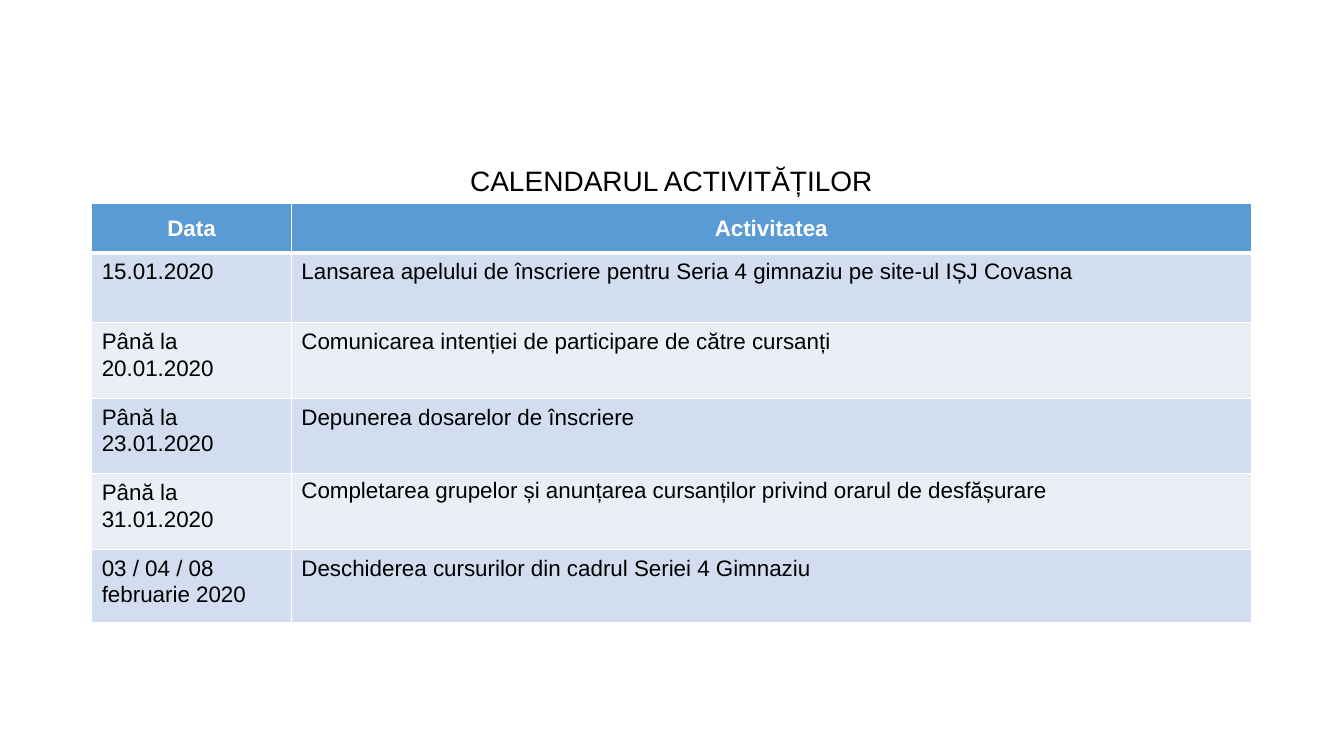
from lxml import etree
from pptx import Presentation, util as u
from pptx.dml.color import RGBColor
from pptx.enum import text
from pptx.oxml import ns

deck = Presentation()
deck.slide_width, deck.slide_height = u.Inches(13.33), u.Inches(7.5)
slide = deck.slides.add_slide(deck.slide_layouts[6])

LEFT, WIDTH = 0.91, 11.5
COLS = [1.98, 9.52]
ROWS = [0.49, 0.69, 0.75, 0.75, 0.75, 0.73]
HEAD, BANDS = "5B9BD5", ["EAEFF7", "D2DEEF"]
MID = text.MSO_ANCHOR.MIDDLE


def write(para, words, size, color, bold=False, center=False):
    run = para.add_run()
    run.text = words
    font = run.font
    font.name, font.size, font.bold = "Arial", u.Pt(size), bold
    font.color.rgb = RGBColor.from_string(color)
    para.alignment = text.PP_ALIGN.CENTER if center else text.PP_ALIGN.LEFT


def edge(cell, side, width):
    line = etree.SubElement(cell._tc.get_or_add_tcPr(), ns.qn("a:ln" + side), w=str(u.Pt(width)))
    fill = etree.SubElement(line, ns.qn("a:solidFill"))
    etree.SubElement(fill, ns.qn("a:srgbClr"), val="FFFFFF")


# Title
box = slide.shapes.add_textbox(*map(u.Inches, (LEFT, 1.6, WIDTH, 0.42)))
frame = box.text_frame
frame.word_wrap = True
frame.vertical_anchor = MID
title = frame.paragraphs[0]
title.line_spacing = 0.9
write(title, "CALENDARUL ACTIVITĂȚILOR", 20, "000000", center=True)

# Calendar entries
items = [
    ("Data", "Activitatea"),
    ("15.01.2020", "Lansarea apelului de înscriere pentru Seria 4 gimnaziu pe site-ul IȘJ Covasna"),
    ("Până la 20.01.2020", "Comunicarea intenției de participare de către cursanți"),
    ("Până la 23.01.2020", "Depunerea dosarelor de înscriere"),
    ("Până la 31.01.2020", "Completarea grupelor și anunțarea cursanților privind orarul de desfășurare"),
    ("03 / 04 / 08 februarie 2020", "Deschiderea cursurilor din cadrul Seriei 4 Gimnaziu"),
]
SINGLE = (4, 1)  # the one cell with plain line spacing

# Table grid
area = map(u.Inches, (LEFT, 2.02, WIDTH, sum(ROWS)))
table = slide.shapes.add_table(len(ROWS), len(COLS), *area).table
for col, width in zip(table.columns, COLS):
    col.width = u.Inches(width)
for row, height in zip(table.rows, ROWS):
    row.height = u.Inches(height)

# Table cells
for r, item in enumerate(items):
    top = r == 0
    for c, words in enumerate(item):
        cell = table.cell(r, c)
        for side in "LRTB":
            thick = (top and side == "B") or (r == 1 and side == "T")
            edge(cell, side, 3 if thick else 1)
        cell.fill.solid()
        cell.fill.fore_color.rgb = RGBColor.from_string(HEAD if top else BANDS[r % 2])
        cell.vertical_anchor = MID if top else text.MSO_ANCHOR.TOP
        para = cell.text_frame.paragraphs[0]
        if (r, c) != SINGLE:
            para.line_spacing = 1.07
            para.space_after = u.Pt(8)
        write(para, words, 16, "FFFFFF" if top else "000000", bold=top, center=top)

deck.save("out.pptx")
